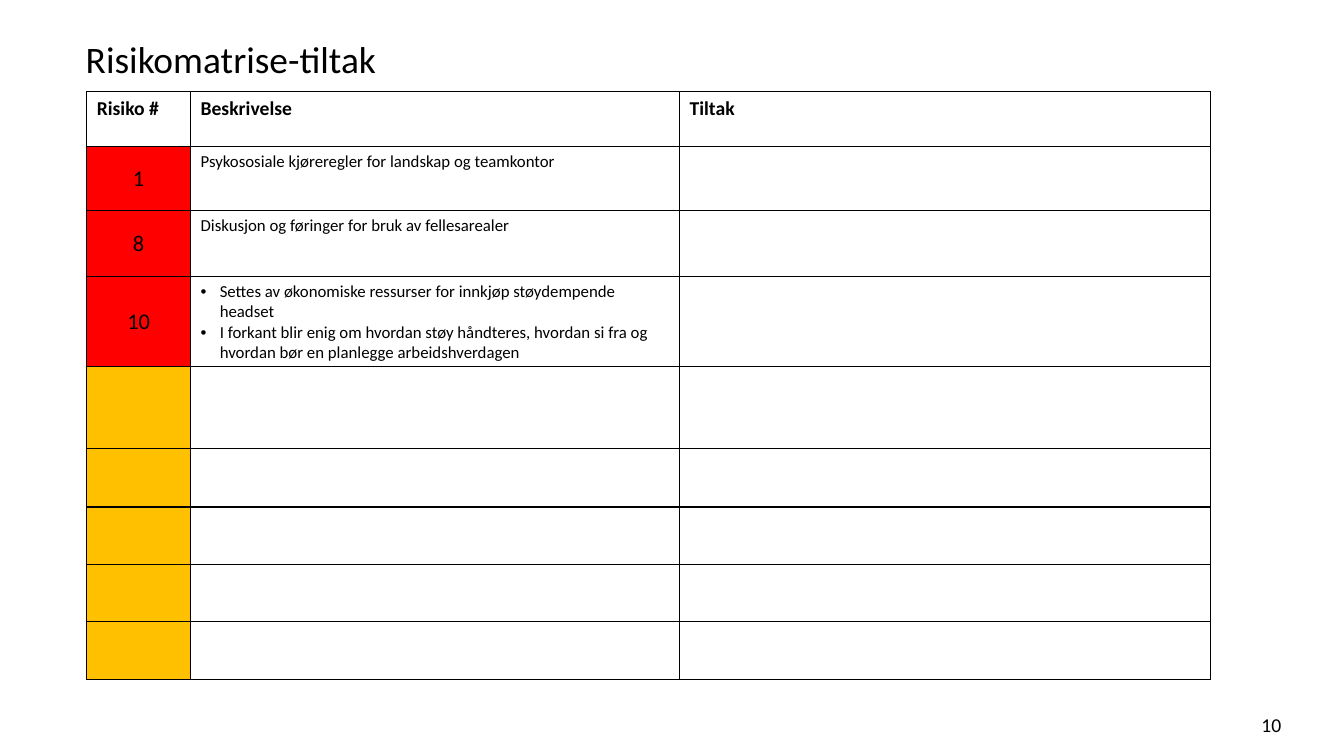
from lxml import etree
from pptx import Presentation
from pptx.dml.color import RGBColor
from pptx.enum import text
from pptx.oxml import ns
from pptx.util import Inches, Pt

BLACK = RGBColor(0, 0, 0)
WHITE = RGBColor(255, 255, 255)
RED = RGBColor(255, 0, 0)
AMBER = RGBColor(255, 192, 0)

COLUMN_WIDTHS = [1.03, 4.85, 5.27]
ROW_HEIGHTS = [0.54, 0.64, 0.65, 0.9, 0.81, 0.58, 0.57, 0.57, 0.57]
HEADINGS = ["Risiko #", "Beskrivelse", "Tiltak"]
RISKS = [
    ("1", ["Psykososiale kjøreregler for landskap og teamkontor"]),
    ("8", ["Diskusjon og føringer for bruk av fellesarealer"]),
    ("10", [
        "Settes av økonomiske ressurser for innkjøp støydempende headset",
        "I forkant blir enig om hvordan støy håndteres, hvordan si fra og "
        "hvordan bør en planlegge arbeidshverdagen",
    ]),
]


def add_xml(parent, tag, **attributes):
    return etree.SubElement(parent, ns.qn(tag), attributes)


class RiskPage:
    """Holds the text style and the current slide."""

    def __init__(self, deck, font="Calibri", color=BLACK):
        self.font, self.color = font, color
        self.page = deck.slides.add_slide(deck.slide_layouts[5])

    def add_lines(self, frame, lines, size, bold=False,
                  align=text.PP_ALIGN.LEFT, bullets=False):
        for index, line in enumerate(lines):
            para = frame.add_paragraph() if index else frame.paragraphs[0]
            para.alignment = align
            if bullets:
                properties = para._p.get_or_add_pPr()
                properties.set("marL", str(Inches(0.19)))
                properties.set("indent", str(-Inches(0.19)))
                add_xml(properties, "a:buFont", typeface="Arial")
                add_xml(properties, "a:buChar", char="•")
            span = para.add_run()
            span.text = line
            span.font.name = self.font
            span.font.size = Pt(size)
            span.font.bold = bold
            span.font.color.rgb = self.color

    def title(self, wording, left, top, width, height):
        box = self.page.shapes.title
        box.left, box.top = Inches(left), Inches(top)
        box.width, box.height = Inches(width), Inches(height)
        frame = box.text_frame
        frame.auto_size = text.MSO_AUTO_SIZE.NONE
        frame.vertical_anchor = text.MSO_ANCHOR.MIDDLE
        self.add_lines(frame, [wording], 26.7)
        frame.paragraphs[0].line_spacing = 0.9

    def label(self, wording, left, top, width, height, size):
        box = self.page.shapes.add_textbox(
            Inches(left), Inches(top), Inches(width), Inches(height))
        box.text_frame.word_wrap = True
        self.add_lines(box.text_frame, [wording], size,
                       align=text.PP_ALIGN.CENTER)

    def grid(self, left, top, widths, heights):
        table = self.page.shapes.add_table(
            len(heights), len(widths), Inches(left), Inches(top),
            Inches(sum(widths)), Inches(sum(heights))).table
        table.first_row = table.horz_banding = False
        for column, width in zip(table.columns, widths):
            column.width = Inches(width)
        for row, height in zip(table.rows, heights):
            row.height = Inches(height)
        for cell in table.iter_cells():
            self.outline(cell)
            self.fill(cell, WHITE)
        return table

    def outline(self, cell):
        properties = cell._tc.get_or_add_tcPr()
        for side in ("a:lnL", "a:lnR", "a:lnT", "a:lnB"):
            line = add_xml(properties, side, w=str(Pt(1)))
            paint = add_xml(line, "a:solidFill")
            add_xml(paint, "a:srgbClr", val=str(BLACK))

    def fill(self, cell, color):
        cell.fill.solid()
        cell.fill.fore_color.rgb = color


def main():
    deck = Presentation()
    deck.slide_width, deck.slide_height = Inches(13.33), Inches(7.5)
    risk_page = RiskPage(deck)

    # Title and page number
    risk_page.title("Risikomatrise-tiltak", 0.75, 0.35, 11.84, 0.51)
    risk_page.label("10", 12.36, 7.02, 0.5, 0.4, 14)

    # Table headings
    table = risk_page.grid(0.86, 0.91, COLUMN_WIDTHS, ROW_HEIGHTS)
    for column, heading in enumerate(HEADINGS):
        risk_page.add_lines(table.cell(0, column).text_frame, [heading], 14,
                            bold=True)

    # Severity colours: red for the listed risks, amber for the open rows
    for row in range(1, len(ROW_HEIGHTS)):
        risk_page.fill(table.cell(row, 0),
                       RED if row <= len(RISKS) else AMBER)

    # Risk numbers and descriptions
    for row, (number, lines) in enumerate(RISKS, start=1):
        number_cell = table.cell(row, 0)
        number_cell.vertical_anchor = text.MSO_ANCHOR.MIDDLE
        risk_page.add_lines(number_cell.text_frame, [number], 16,
                            align=text.PP_ALIGN.CENTER)
        risk_page.add_lines(table.cell(row, 1).text_frame, lines, 12,
                            bullets=len(lines) > 1)

    deck.save("out.pptx")


if __name__ == "__main__":
    main()
